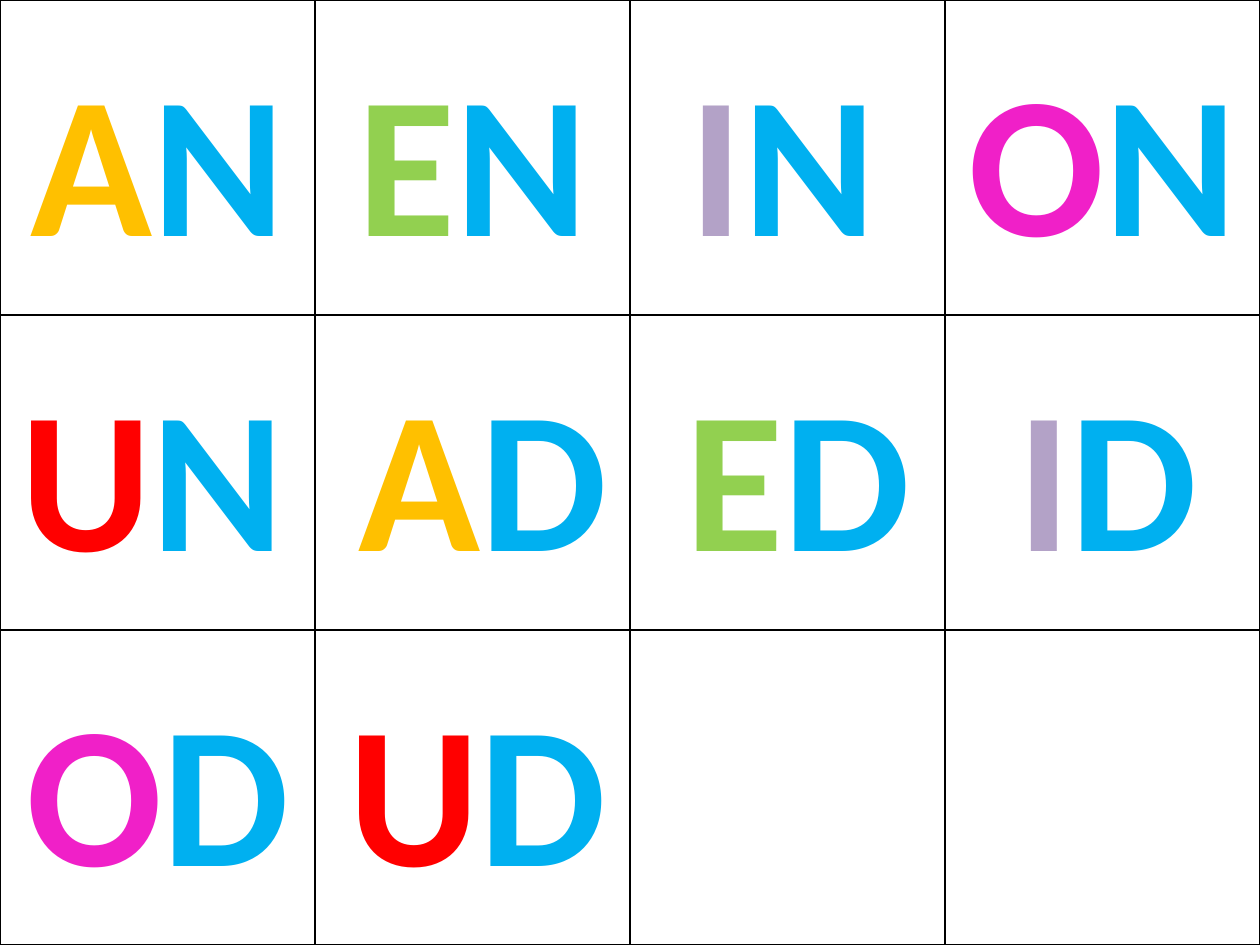
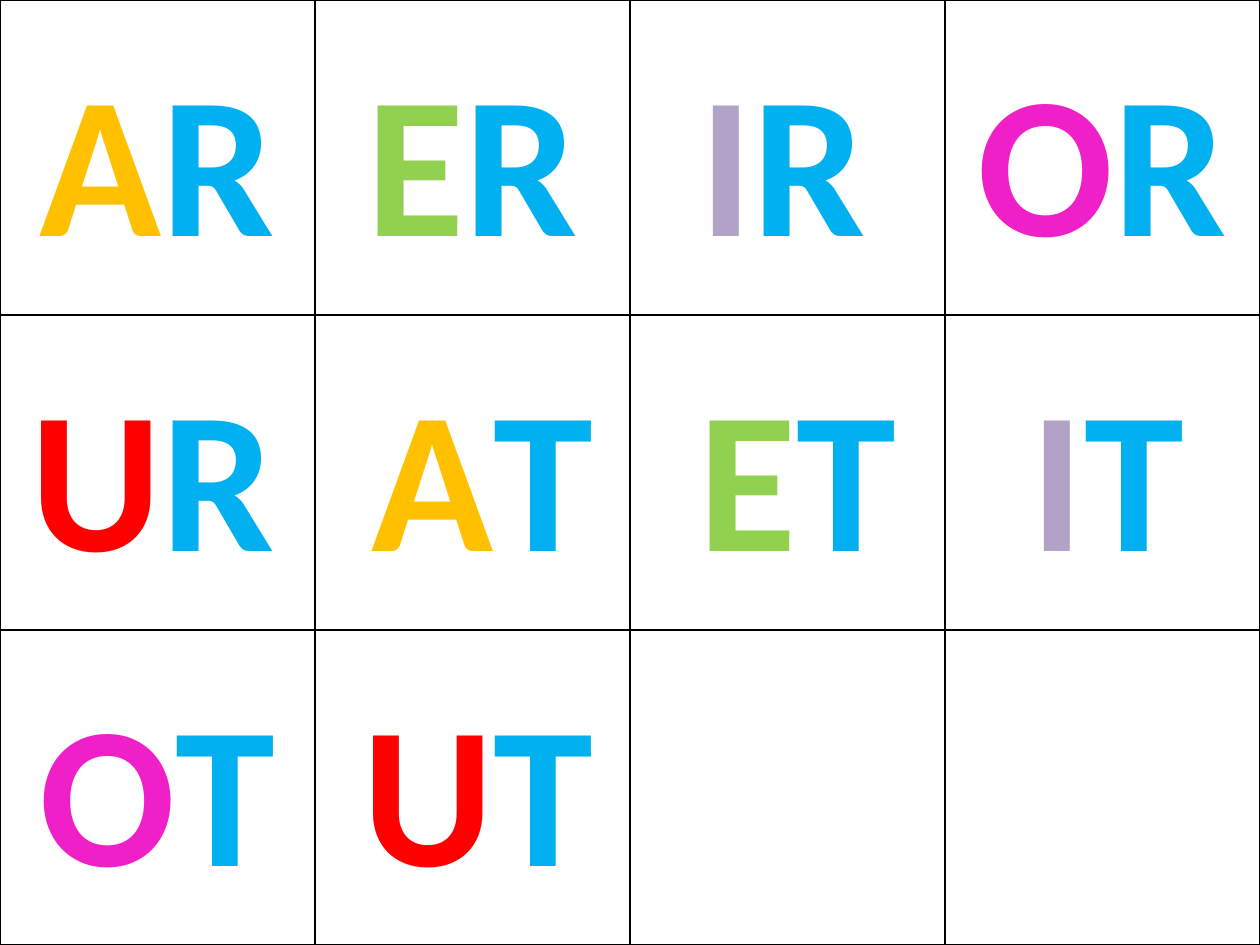
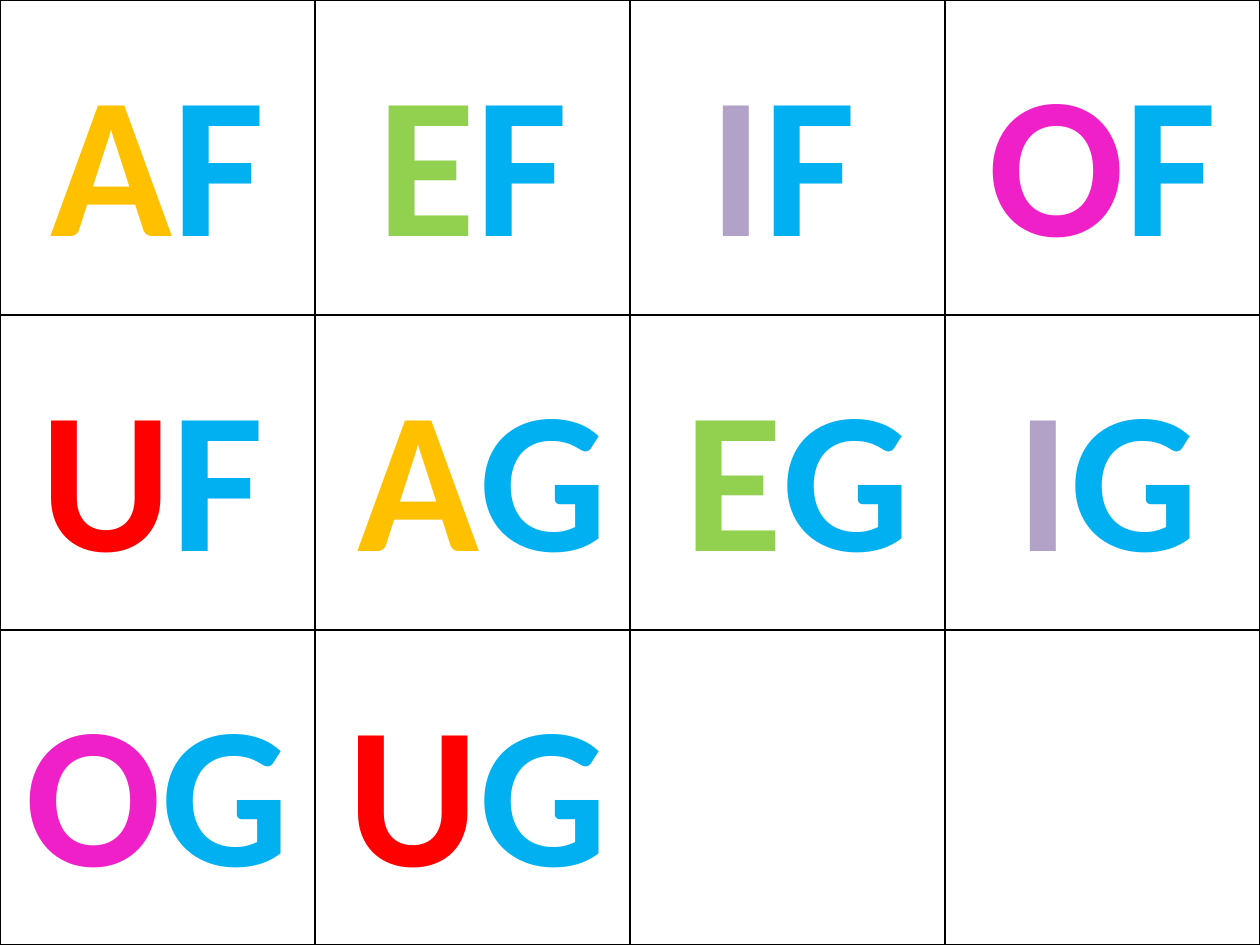
from lxml import etree
from pptx import Presentation
from pptx.dml.color import RGBColor
from pptx.enum.text import MSO_AUTO_SIZE, PP_ALIGN
from pptx.oxml.ns import qn
from pptx.util import Inches, Pt

CENTER = PP_ALIGN.CENTER
GROW = MSO_AUTO_SIZE.SHAPE_TO_FIT_TEXT

ROWS, COLS, CELL = 3, 4, 2.5
NUDGE = 0.08
VOWELS = {"A": "FFC000", "E": "92D050", "I": "B3A2C7", "O": "F020C8", "U": "FF0000"}
NARROW_VOWELS = "IU"
CONSONANT_COLOR = "00B0F0"
CONSONANT_PAIRS = ("ND", "RT", "FG")


def rgb(hex_color):
    """Turn a hex string into a colour."""
    return RGBColor.from_string(hex_color)


def add_line(parent, tag, color, width=1):
    """Add a solid line element, used for cell borders and letter outlines."""
    ln = etree.SubElement(parent, qn(tag), w=str(Pt(width)))
    fill = etree.SubElement(ln, qn("a:solidFill"))
    etree.SubElement(fill, qn("a:srgbClr"), val=color)


def add_run(p, text, *, color, size=115, font="Calibri", bold=True, outline="054697"):
    """Add a formatted run to a paragraph."""
    r = p.add_run()
    r.text = text
    add_line(r.font._element, "a:ln", outline)
    r.font.size = Pt(size)
    r.font.bold = bold
    r.font.name = font
    r.font.color.rgb = rgb(color)


class Deck:
    """Hold the presentation, its style and the current slide."""

    def __init__(self):
        """Start an empty deck."""
        self.prs = Presentation()
        self.prs.slide_width = Inches(COLS * CELL)
        self.prs.slide_height = Inches(ROWS * CELL)
        self.border, self.paper = "000000", "FFFFFF"
        self.s = None

    def add_slide(self):
        """Add a blank slide and make it current."""
        self.s = self.prs.slides.add_slide(self.prs.slide_layouts[6])

    def add_grid(self):
        """Fill the slide with a table of square bordered cells."""
        table = self.s.shapes.add_table(
            ROWS, COLS, 0, 0, self.prs.slide_width, self.prs.slide_height).table
        table.first_row = table.horz_banding = False
        for cell in table.iter_cells():
            tcPr = cell._tc.get_or_add_tcPr()
            for side in "LRTB":
                add_line(tcPr, f"a:ln{side}", self.border)
            cell.fill.solid()
            cell.fill.fore_color.rgb = rgb(self.paper)

    def add_syllable(self, slot, vowel, consonant, nudged):
        """Place a vowel and a consonant in a numbered grid cell."""
        row, col = divmod(slot, COLS)
        left = col * CELL + (NUDGE if nudged and col else 0)
        width = CELL - (NUDGE if vowel in NARROW_VOWELS else 0)
        sp = self.s.shapes.add_textbox(
            Inches(left), Inches(row * CELL + 0.23), Inches(width), Inches(2.04))
        tf = sp.text_frame
        tf.word_wrap = True
        tf.auto_size = GROW
        p = tf.paragraphs[0]
        p.alignment = CENTER
        add_run(p, vowel, color=VOWELS[vowel])
        add_run(p, consonant, color=CONSONANT_COLOR)


def main():
    """Build one slide of syllable cards for each pair of consonants."""
    deck = Deck()
    for pair in CONSONANT_PAIRS:
        deck.add_slide()
        deck.add_grid()
        syllables = [(v, c) for c in pair for v in VOWELS]
        for slot, (vowel, consonant) in enumerate(syllables):
            deck.add_syllable(slot, vowel, consonant, nudged=consonant == pair[1])
    deck.prs.save("out.pptx")


if __name__ == "__main__":
    main()
